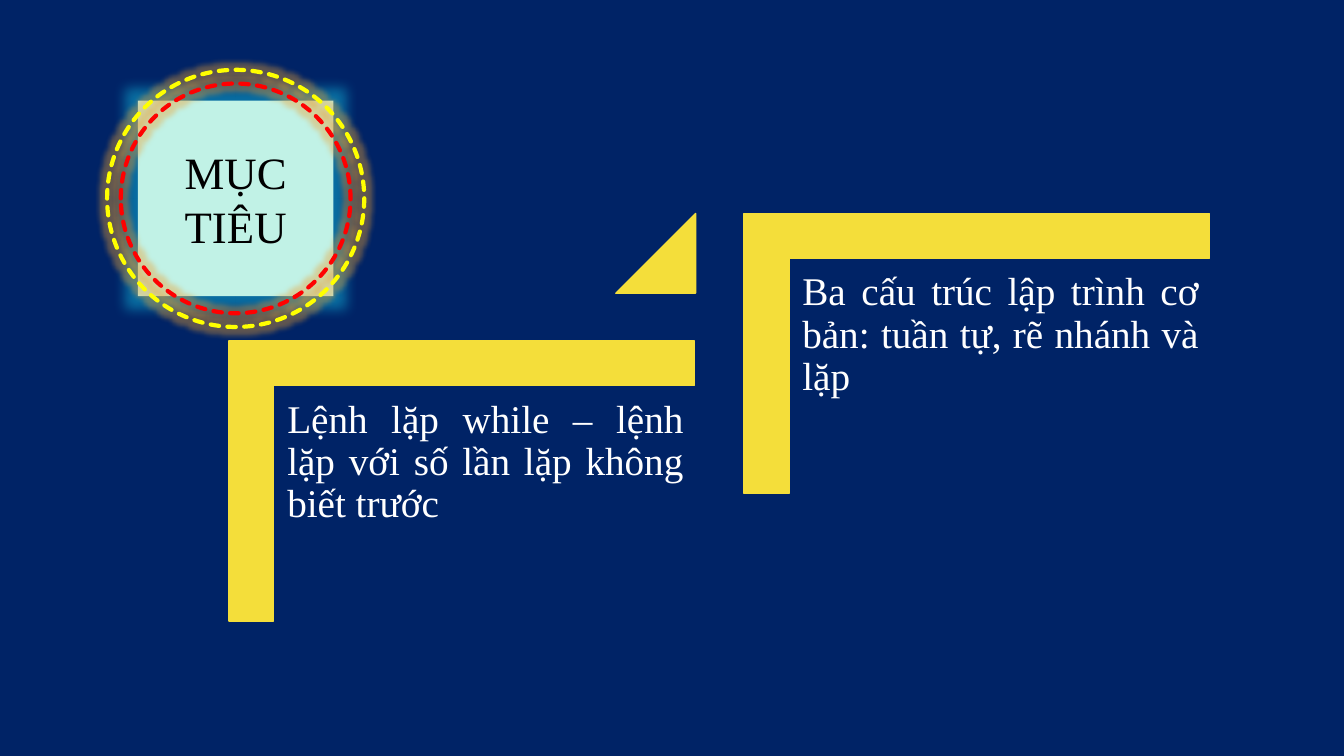
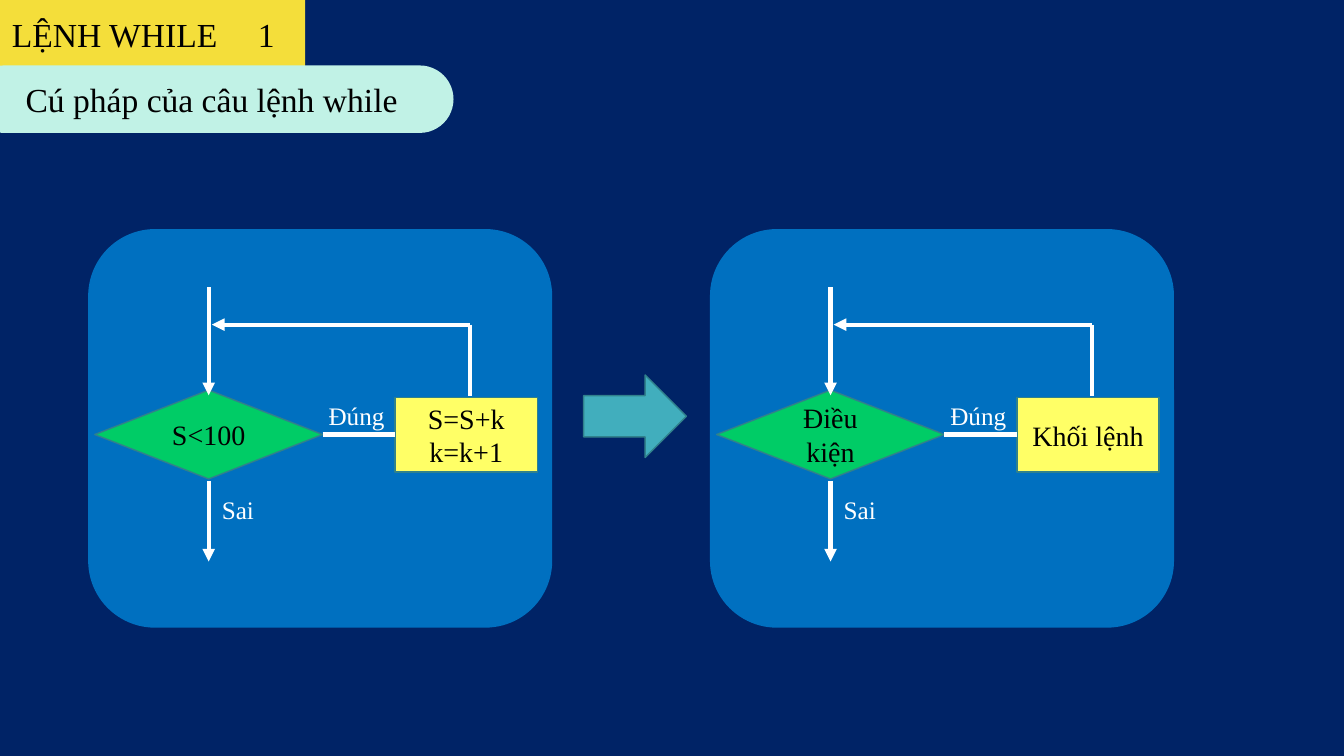
from lxml.etree import SubElement
from pptx import Presentation
from pptx.dml.color import RGBColor
from pptx.enum.dml import MSO_LINE
from pptx.enum.shapes import MSO_CONNECTOR, MSO_SHAPE as Preset
from pptx.enum.text import MSO_ANCHOR as Anchor, MSO_AUTO_SIZE, PP_ALIGN as Align
from pptx.oxml.ns import qn
from pptx.util import Cm, Pt

NAVY = RGBColor(0x00, 0x23, 0x66)
GOLD = RGBColor(0xF4, 0xDE, 0x3A)
MINT = RGBColor(0xC1, 0xF2, 0xE6)
BLUE = RGBColor(0x00, 0x70, 0xC0)
CYAN = RGBColor(0x0F, 0x9F, 0xC9)
ORANGE = RGBColor(0xED, 0xA0, 0x30)
TEAL = RGBColor(0x41, 0xAE, 0xBD)
DARK_TEAL = RGBColor(0x30, 0x81, 0x8C)
GREEN = RGBColor(0x00, 0xCC, 0x66)
LEMON = RGBColor(0xFF, 0xFF, 0x66)
RED = RGBColor(0xFF, 0x00, 0x00)
YELLOW = RGBColor(0xFF, 0xFF, 0x00)
WHITE = RGBColor(0xFF, 0xFF, 0xFF)
BLACK = RGBColor(0x00, 0x00, 0x00)
FONT = "Times New Roman"

TWO_CONTENT, TITLE_ONLY = 3, 5


def place(shape, left, top, width, height):
    shape.left, shape.top = Cm(left), Cm(top)
    shape.width, shape.height = Cm(width), Cm(height)


def paint(shape, fill=None, line=None, width=1):
    shape.shadow.inherit = False
    if fill is None:
        shape.fill.background()
    else:
        shape.fill.solid()
        shape.fill.fore_color.rgb = fill
    if line is None:
        shape.line.fill.background()
    else:
        shape.line.color.rgb = line
        shape.line.width = Pt(width)


def write(shape, text, size, color=BLACK, align=Align.CENTER, anchor=Anchor.MIDDLE):
    frame = shape.text_frame
    frame.word_wrap = True
    frame.auto_size = MSO_AUTO_SIZE.NONE
    frame.vertical_anchor = anchor
    frame.text = text
    for para in frame.paragraphs:
        para.alignment = align
        para.font.name, para.font.size = FONT, Pt(size)
        para.font.color.rgb = color
    return frame


def add_shape(page, preset, box, fill=None, line=None, width=1):
    shape = page.shapes.add_shape(preset, *(Cm(length) for length in box))
    paint(shape, fill, line, width)
    return shape


def shape_title(page, preset, box, fill):
    """Give the title placeholder a preset outline and a fill."""
    title = page.shapes.title
    place(title, *box)
    geometry = SubElement(title.element.spPr, qn("a:prstGeom"), prst=preset)
    SubElement(geometry, qn("a:avLst"))
    paint(title, fill)
    return title


def add_glow(shape, color, radius, opacity):
    effects = shape.element.spPr.find(qn("a:effectLst"))
    glow = SubElement(effects, qn("a:glow"), rad=str(Pt(radius)))
    tint = SubElement(glow, qn("a:srgbClr"), val=str(color))
    SubElement(tint, qn("a:alpha"), val=str(opacity * 1000))


def add_line(page, start, end, arrow=False):
    points = [Cm(length) for length in (*start, *end)]
    line = page.shapes.add_connector(MSO_CONNECTOR.STRAIGHT, *points)
    line.line.color.rgb = WHITE
    line.line.width = Pt(3)
    if arrow:
        SubElement(line.line._get_or_add_ln(), qn("a:tailEnd"), type="triangle")
    SubElement(line.element.spPr, qn("a:effectLst"))


def add_label(page, text, left, top, width):
    box = page.shapes.add_textbox(Cm(left), Cm(top), Cm(width), Cm(1.02))
    write(box, text, 18, WHITE, Align.LEFT, Anchor.TOP)


def add_ring(page, center, diameter, color):
    x, y = center
    box = (x - diameter / 2, y - diameter / 2, diameter, diameter)
    ring = add_shape(page, Preset.OVAL, box, line=color, width=3)
    ring.line.dash_style = MSO_LINE.SQUARE_DOT
    ring.line._get_or_add_ln().set("cap", "rnd")
    add_glow(ring, ORANGE, 8, 40)


def add_goal(page, body, text, left, top):
    """Frame a body placeholder with a corner at its upper left."""
    width, height, inset = 11.73, 7.06, 1.17
    shift = (width - height) / 2
    corner = add_shape(page, Preset.CORNER, (left + shift, top - shift, height, width),
                       GOLD, GOLD)
    corner.rotation = 90
    corner.adjustments[0] = corner.adjustments[1] = 0.16
    place(body, left + inset, top + inset, 10.59, 9.3)
    frame = write(body, text, 28, WHITE, Align.JUSTIFY, Anchor.TOP)
    frame.margin_left = frame.margin_right = Cm(0.3)
    frame.margin_top = frame.margin_bottom = Cm(0.3)
    para = frame.paragraphs[0]
    para.line_spacing = 0.9
    para.space_before = Pt(0)
    properties = para._p.get_or_add_pPr()
    properties.set("marL", "0")
    properties.set("indent", "0")
    SubElement(properties, qn("a:buNone"))
    # The schema wants the bullet before the run defaults.
    properties.append(properties.find(qn("a:defRPr")))


def add_loop_chart(page, left, condition, action):
    """Draw the flow of a while loop on a rounded panel."""
    trunk, middle, back = left + 3.02, 10.95, 8.18
    test_right, action_left, back_x = left + 5.89, left + 7.72, left + 9.6
    add_shape(page, Preset.ROUNDED_RECTANGLE, (left, 5.79, 11.66, 10.01), BLUE, BLUE)
    test = add_shape(page, Preset.DIAMOND, (left + 0.15, 9.83, 5.74, 2.24),
                     GREEN, DARK_TEAL)
    write(test, condition, 20)
    step = add_shape(page, Preset.RECTANGLE, (action_left, 10.02, 3.58, 1.88),
                     LEMON, DARK_TEAL)
    write(step, action, 20)
    add_line(page, (trunk, 7.24), (trunk, 9.96), arrow=True)
    add_line(page, (test_right, middle), (action_left, middle))
    add_line(page, (trunk, 12.12), (trunk, 14.15), arrow=True)
    add_line(page, (back_x, back), (back_x, 9.98))
    add_line(page, (back_x, back), (trunk + 0.08, back), arrow=True)
    add_label(page, "Đúng", left + 5.79, 9.96, 2.06)
    add_label(page, "Sai", left + 3.1, 12.34, 1.4)


def build_goals(deck):
    page = deck.slides.add_slide(deck.slide_layouts[TWO_CONTENT])
    center, diameter = (5.94, 5), 4.93
    corner = [middle - diameter / 2 for middle in center]
    title = shape_title(page, "ellipse", (*corner, diameter, diameter), MINT)
    write(title, "MỤC TIÊU", 32)
    add_glow(title, CYAN, 18, 60)
    add_ring(page, center, 5.79, RED)
    add_ring(page, center, 6.48, YELLOW)
    goals = ("Lệnh lặp while – lệnh lặp với số lần lặp không biết trước",
             "Ba cấu trúc lập trình cơ bản: tuần tự, rẽ nhánh và lặp")
    for index, goal in enumerate(goals):
        add_goal(page, page.placeholders[index + 1], goal,
                 5.77 + 12.98 * index, 8.59 - 3.21 * index)
    triangle = add_shape(page, Preset.ISOSCELES_TRIANGLE, (15.52, 5.38, 2.01, 2.01),
                         GOLD, GOLD)
    triangle.adjustments[0] = 1


def build_syntax(deck):
    page = deck.slides.add_slide(deck.slide_layouts[TITLE_ONLY])
    title = shape_title(page, "roundRect", (-0.84, 0, 8.53, 1.7), GOLD)
    guides = title.element.spPr.find(qn("a:prstGeom")).find(qn("a:avLst"))
    SubElement(guides, qn("a:gd"), name="adj", fmla="val 50000")
    frame = write(title, "LỆNH WHILE\t1", 24, align=Align.LEFT)
    frame.margin_left = Cm(1.14)
    properties = frame.paragraphs[0]._p.get_or_add_pPr()
    tabs = SubElement(properties, qn("a:tabLst"))
    SubElement(tabs, qn("a:tab"), pos=str(Cm(6.2)), algn="l")
    properties.append(properties.find(qn("a:defRPr")))

    subtitle = add_shape(page, Preset.ROUNDED_RECTANGLE, (-0.76, 1.65, 12.19, 1.7), MINT)
    subtitle.adjustments[0] = 0.5
    write(subtitle, "Cú pháp của câu lệnh while", 24)

    add_loop_chart(page, 2.24, "S<100", "S=S+k\nk=k+1")
    add_shape(page, Preset.RIGHT_ARROW, (14.71, 9.45, 2.59, 2.08), TEAL, DARK_TEAL)
    add_loop_chart(page, 17.91, "Điều kiện", "Khối lệnh")


def main():
    deck = Presentation()
    deck.slide_width, deck.slide_height = Cm(33.87), Cm(19.05)
    background = deck.slide_master.background.fill
    background.solid()
    background.fore_color.rgb = NAVY
    build_goals(deck)
    build_syntax(deck)
    deck.save("out.pptx")


if __name__ == "__main__":
    main()
